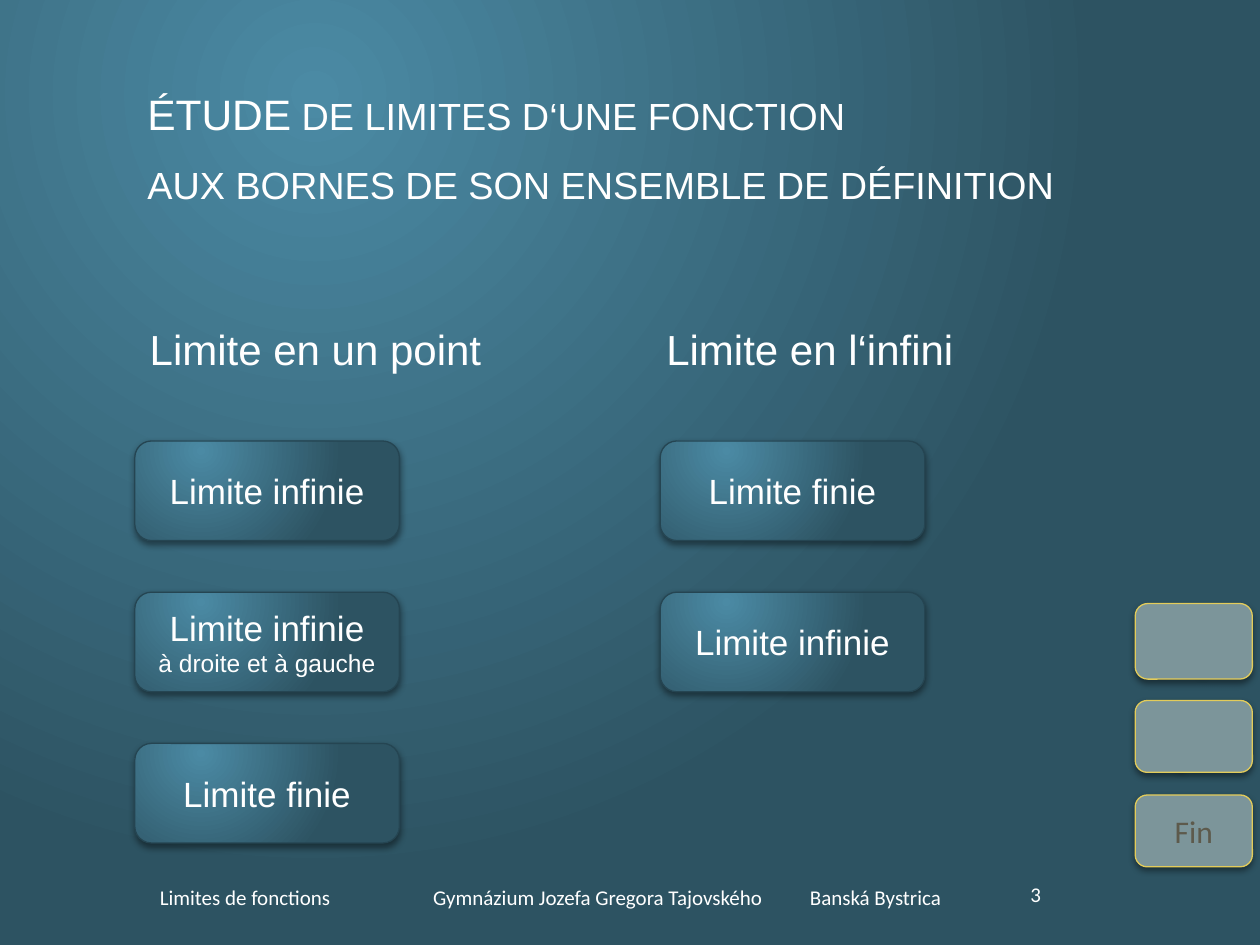
import pptx
import pptx.dml.color
import pptx.enum.shapes
import pptx.enum.text
import pptx.oxml.ns
import pptx.util
from lxml import etree

Inches, Pt = pptx.util.Inches, pptx.util.Pt
qn = pptx.oxml.ns.qn
SHAPE = pptx.enum.shapes.MSO_SHAPE
ANCHOR = pptx.enum.text.MSO_ANCHOR
ALIGN = pptx.enum.text.PP_ALIGN


def color(hex_string):
    return pptx.dml.color.RGBColor.from_string(hex_string)


class SlideBuilder:
    WHITE = "FFFFFF"
    GRADIENT = ("4B8AA4", "2D5362")
    BUTTON_LINE = "254552"
    NAVIGATION = "7C959A"
    NAVIGATION_LINE = "E3CC5A"
    NAVIGATION_TEXT = "5D5A4C"

    def __init__(self, presentation):
        self.slide = presentation.slides.add_slide(presentation.slide_layouts[5])
        self.radial_fill(self.slide.background.fill, self.slide.element)

    def radial_fill(self, fill, element):
        """Fill with the circular theme gradient, lit from the upper left."""
        fill.gradient()
        for stop, shade in zip(fill.gradient_stops, self.GRADIENT):
            stop.color.rgb = color(shade)
        gradient = next(element.iter(qn("a:gradFill")))
        gradient.remove(gradient.find(qn("a:lin")))
        circle = etree.SubElement(gradient, qn("a:path"), {"path": "circle"})
        etree.SubElement(circle, qn("a:fillToRect"),
                         {"l": "50000", "t": "20000", "r": "100000", "b": "100000"})

    def drop_shadow(self, shape, opacity):
        shape.shadow.inherit = False
        effects = shape.element.spPr.find(qn("a:effectLst"))
        shadow = etree.SubElement(effects, qn("a:outerShdw"), {
            "blurRad": str(Pt(4)), "dist": str(Pt(2)), "dir": "5400000", "rotWithShape": "0"})
        black = etree.SubElement(shadow, qn("a:srgbClr"), {"val": "000000"})
        etree.SubElement(black, qn("a:alpha"), {"val": str(opacity * 1000)})

    def format_paragraph(self, paragraph, size, font="Arial", shade=WHITE):
        paragraph.font.size = Pt(size)
        paragraph.font.name = font
        paragraph.font.color.rgb = color(shade)

    def title(self, left, top, width, height, lines, size):
        title = self.slide.shapes.title
        title.left, title.top = Inches(left), Inches(top)
        title.width, title.height = Inches(width), Inches(height)
        frame = title.text_frame
        frame.text = "\n".join(lines)
        frame.word_wrap = True
        frame.auto_size = pptx.enum.text.MSO_AUTO_SIZE.NONE
        frame.vertical_anchor = ANCHOR.TOP
        frame.margin_top = Inches(0.1)
        for paragraph in frame.paragraphs:
            paragraph.alignment = ALIGN.LEFT
            self.format_paragraph(paragraph, size)
        frame.paragraphs[1].space_before = Pt(13)
        return frame

    def text(self, left, top, width, height, parts, size, font="Arial", tabs=(),
             anchor=ANCHOR.TOP):
        """One line whose parts start at the given tab stops."""
        box = self.slide.shapes.add_textbox(
            Inches(left), Inches(top), Inches(width), Inches(height))
        frame = box.text_frame
        frame.word_wrap = True
        frame.vertical_anchor = anchor
        paragraph = frame.paragraphs[0]
        paragraph.text = "\t".join(parts)
        if tabs:
            properties = paragraph._p.get_or_add_pPr()
            tab_list = etree.SubElement(properties, qn("a:tabLst"))
            for position in tabs:
                etree.SubElement(tab_list, qn("a:tab"),
                                 {"pos": str(Inches(position)), "algn": "l"})
        self.format_paragraph(paragraph, size, font)

    def box(self, shapes, kind, left, top, width, height, line=None, opacity=44):
        """A preset shape with outline and shadow, not yet filled."""
        shape = shapes.add_shape(
            kind, Inches(left), Inches(top), Inches(width), Inches(height))
        if line:
            shape.line.color.rgb = color(line)
            shape.line.width = Pt(0.75)
        else:
            shape.line.fill.background()
        self.drop_shadow(shape, opacity)
        return shape

    def label(self, shape, lines, sizes, font="Arial", shade=WHITE):
        frame = shape.text_frame
        frame.text = "\n".join(lines)
        frame.vertical_anchor = ANCHOR.MIDDLE
        for paragraph, size in zip(frame.paragraphs, sizes):
            paragraph.alignment = ALIGN.CENTER
            self.format_paragraph(paragraph, size, font, shade)

    def topic_button(self, left, top, lines):
        shape = self.box(self.slide.shapes, SHAPE.ROUNDED_RECTANGLE,
                         left, top, 2.1, 0.79, self.BUTTON_LINE)
        self.radial_fill(shape.fill, shape.element)
        self.label(shape, lines, (20, 14))

    def navigation_shape(self, shapes, kind, *place, **style):
        shape = self.box(shapes, kind, *place, **style)
        shape.fill.solid()
        shape.fill.fore_color.rgb = color(self.NAVIGATION)
        return shape

    def navigation_button(self, top, height, shapes=None):
        return self.navigation_shape(shapes or self.slide.shapes, SHAPE.ROUNDED_RECTANGLE,
                                     9.01, top, 0.93, height, line=self.NAVIGATION_LINE)

    def arrow_button(self, top, height, arrow, *arrow_place):
        group = self.slide.shapes.add_group_shape()
        self.navigation_button(top, height, group.shapes)
        self.navigation_shape(group.shapes, arrow, *arrow_place, opacity=55)

    def end_button(self, top, height, caption):
        button = self.navigation_button(top, height)
        self.label(button, [caption], [18], "Calibri", self.NAVIGATION_TEXT)


def main():
    presentation = pptx.Presentation()
    presentation.slide_width, presentation.slide_height = Inches(10), Inches(7.5)
    builder = SlideBuilder(presentation)

    title = builder.title(1.07, 0.6, 8.18, 1.02, [
        "", "AUX BORNES DE SON ENSEMBLE DE DÉFINITION"], 21.6)
    for words, size in (("ÉTUDE", 24.3), (" DE LIMITES D‘UNE FONCTION", 21.6)):
        run = title.paragraphs[0].add_run()
        run.text = words
        run.font.size = Pt(size)

    builder.text(1.09, 2.52, 7.4, 0.51,
                 ["Limite en un point", "Limite en l‘infini"], 24, tabs=[4.1])

    columns = {
        1.07: [["Limite infinie"],
               ["Limite infinie", "à droite et à gauche"],
               ["Limite finie"]],
        5.24: [["Limite finie"], ["Limite infinie"]],
    }
    for left, topics in columns.items():
        for row, lines in enumerate(topics):
            builder.topic_button(left, 3.5 + 1.2 * row, lines)

    builder.arrow_button(4.79, 0.6, SHAPE.RIGHT_ARROW, 9.15, 4.82, 0.65, 0.53)
    builder.arrow_button(5.56, 0.57, SHAPE.LEFT_ARROW, 9.12, 5.58, 0.71, 0.53)
    builder.end_button(6.31, 0.57, "Fin")

    builder.text(1.17, 6.92, 6.66, 0.4,
                 ["Limites de fonctions", "Gymnázium Jozefa Gregora Tajovského",
                  "Banská Bystrica"],
                 12, "Calibri", tabs=[2.17, 5.16], anchor=ANCHOR.MIDDLE)
    builder.text(8.08, 6.9, 0.95, 0.4, ["3"], 12, "Calibri", anchor=ANCHOR.MIDDLE)
    presentation.save("out.pptx")


if __name__ == "__main__":
    main()
